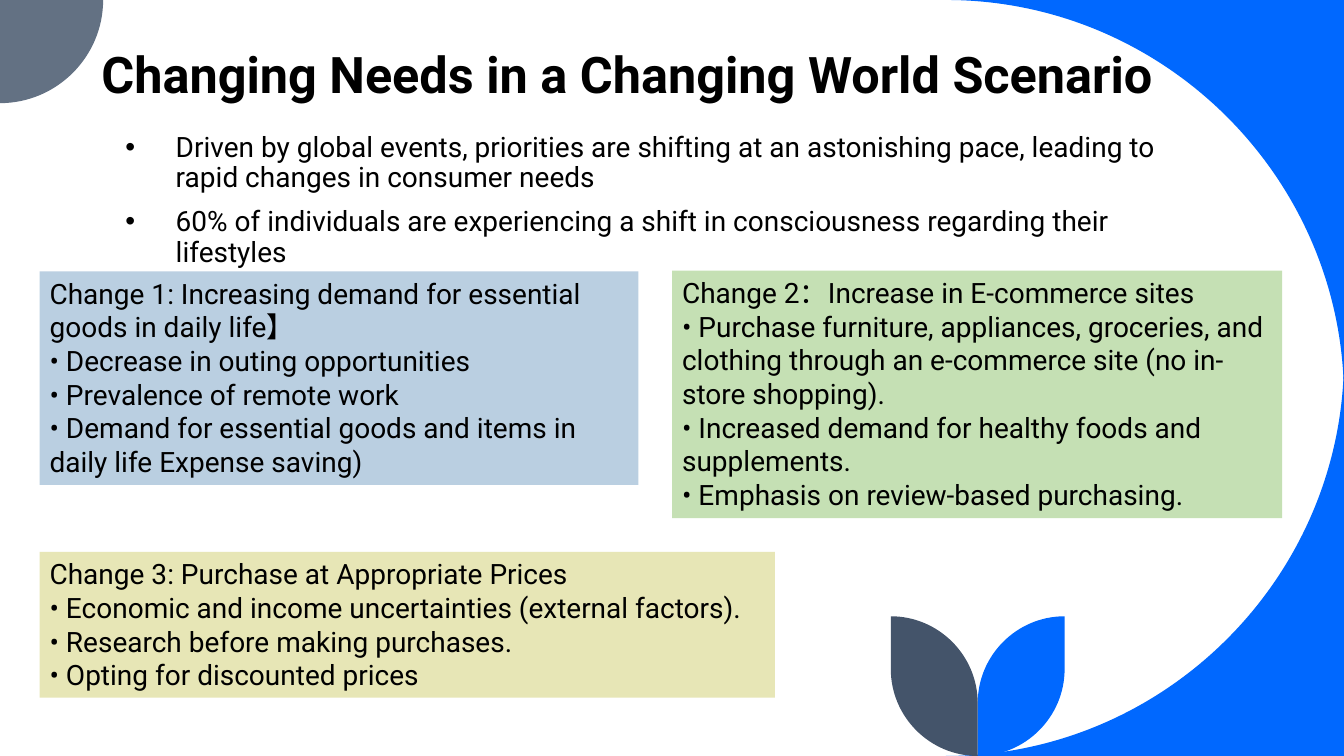
from lxml import etree
from pptx import Presentation
from pptx.dml.color import RGBColor
from pptx.enum.shapes import MSO_SHAPE
from pptx.enum.text import MSO_ANCHOR, MSO_AUTO_SIZE, PP_ALIGN
from pptx.oxml.ns import qn
from pptx.util import Cm, Pt

RECTANGLE = MSO_SHAPE.RECTANGLE
LEFT = PP_ALIGN.LEFT
TOP, BOTTOM = MSO_ANCHOR.TOP, MSO_ANCHOR.BOTTOM
NO_FIT, GROW = MSO_AUTO_SIZE.NONE, MSO_AUTO_SIZE.SHAPE_TO_FIT_TEXT

BLACK = RGBColor(0x00, 0x00, 0x00)
BLUE = RGBColor(0x00, 0x68, 0xFF)
GREY = RGBColor(0x63, 0x71, 0x83)
SLATE = RGBColor(0x44, 0x54, 0x6A)
PALE_BLUE = RGBColor(0xBA, 0xCF, 0xE1)
PALE_YELLOW = RGBColor(0xE7, 0xE6, 0xB6)
PALE_GREEN = RGBColor(0xC5, 0xE0, 0xB4)

FONT = "Roboto"
WIDTH, HEIGHT = 33.87, 19.05
ARC_PULL = 0.55  # share of the way to the corner that makes a quarter circle


def round_corner(before, corner, after):
    """Turn two straight segments that meet in a corner into one quarter arc."""
    curve = etree.Element(qn("a:cubicBezTo"))
    for end in (before, after):
        control = etree.SubElement(curve, qn("a:pt"))
        for axis in "xy":
            start, target = int(end.get(axis)), int(corner.get(axis))
            control.set(axis, str(round(start + ARC_PULL * (target - start))))
    corner_segment, end_segment = corner.getparent(), after.getparent()
    curve.append(after)
    corner_segment.getparent().replace(corner_segment, curve)
    end_segment.getparent().remove(end_segment)


def style_text(paragraph, size, bold=False):
    paragraph.alignment = LEFT
    paragraph.font.name = FONT
    paragraph.font.size = Pt(size)
    paragraph.font.bold = bold
    paragraph.font.color.rgb = BLACK


prs = Presentation()
prs.slide_width, prs.slide_height = Cm(WIDTH), Cm(HEIGHT)
slide = prs.slides.add_slide(prs.slide_layouts[5])

# Curved corners and the two leaves: the second of every three points is rounded
CURVE, DISC = 10.03, 2.6
STEM_X, LEAF_TOP, LEAF_WIDTH = 24.64, 15.53, 2.19
curve_x = WIDTH - CURVE
outlines = [
    (BLUE, [(curve_x, 0), (WIDTH, 0), (WIDTH, CURVE), (WIDTH, 0)]),
    (BLUE, [(WIDTH, HEIGHT - CURVE), (WIDTH, HEIGHT), (curve_x, HEIGHT), (WIDTH, HEIGHT)]),
    (GREY, [(DISC, 0), (DISC, DISC), (0, DISC), (0, 0)]),
]
for color, tip_x in ((BLUE, STEM_X + LEAF_WIDTH), (SLATE, STEM_X - LEAF_WIDTH)):
    outlines.append((color, [
        (tip_x, HEIGHT - LEAF_WIDTH), (tip_x, HEIGHT), (STEM_X, HEIGHT),
        (STEM_X, LEAF_TOP + LEAF_WIDTH), (STEM_X, LEAF_TOP), (tip_x, LEAF_TOP),
    ]))

for color, points in outlines:
    corners = [(Cm(x), Cm(y)) for x, y in points]
    builder = slide.shapes.build_freeform(*corners[0])
    builder.add_line_segments(corners[1:], close=True)
    decoration = builder.convert_to_shape()
    nodes = list(decoration._element.iter(qn("a:pt")))
    for before, corner, after in zip(nodes[::3], nodes[1::3], nodes[2::3]):
        round_corner(before, corner, after)
    decoration.shadow.inherit = False
    decoration.fill.solid()
    decoration.fill.fore_color.rgb = color
    decoration.line.fill.background()

# Title
title = slide.shapes.title
title.left, title.top, title.width, title.height = Cm(2.3), Cm(0.38), Cm(28.78), Cm(2.39)
title.text = "Changing Needs in a Changing World Scenario"
title.text_frame.auto_size = NO_FIT
title.text_frame.vertical_anchor = BOTTOM
heading = title.text_frame.paragraphs[0]
heading.line_spacing = 0.9
style_text(heading, 36, bold=True)

# Introductory bullets
intro = slide.shapes.add_textbox(Cm(2.91), Cm(3.23), Cm(27.15), Cm(3.6)).text_frame
intro.word_wrap = True
intro.text = "\n".join([
    "Driven by global events, priorities are shifting at an astonishing pace, "
    "leading to rapid changes in consumer needs",
    "60% of individuals are experiencing a shift in consciousness regarding their lifestyles",
])
for number, paragraph in enumerate(intro.paragraphs):
    properties = paragraph._p.get_or_add_pPr()
    properties.set("marL", str(Cm(1.27)))
    properties.set("indent", str(-Cm(1.27)))
    etree.SubElement(properties, qn("a:buFont")).set("typeface", "Arial")
    etree.SubElement(properties, qn("a:buChar")).set("char", "•")
    paragraph.line_spacing = 0.9
    if number:
        paragraph.space_before = Pt(10)
    style_text(paragraph, 20)

# The three changes
changes = [
    (1, 6.84, 15.09, 5.38, PALE_BLUE, [
        "Change 1: Increasing demand for essential goods in daily life】",
        "• Decrease in outing opportunities",
        "• Prevalence of remote work",
        "• Demand for essential goods and items in daily life Expense saving)",
    ]),
    (1, 13.91, 18.53, 3.67, PALE_YELLOW, [
        "Change 3: Purchase at Appropriate Prices",
        "• Economic and income uncertainties (external factors).",
        "• Research before making purchases.",
        "• Opting for discounted prices",
    ]),
    (16.94, 6.82, 15.37, 6.24, PALE_GREEN, [
        "Change 2：Increase in E-commerce sites",
        "• Purchase furniture, appliances, groceries, and clothing through "
        "an e-commerce site (no in-store shopping).",
        "• Increased demand for healthy foods and supplements.",
        "• Emphasis on review-based purchasing.",
    ]),
]
for left, top, width, height, color, lines in changes:
    panel = slide.shapes.add_shape(RECTANGLE, Cm(left), Cm(top), Cm(width), Cm(height))
    panel.shadow.inherit = False
    panel.fill.solid()
    panel.fill.fore_color.rgb = color
    panel.line.fill.background()
    panel.text_frame.text = "\n".join(lines)
    panel.text_frame.word_wrap = True
    panel.text_frame.auto_size = GROW
    panel.text_frame.vertical_anchor = TOP
    for paragraph in panel.text_frame.paragraphs:
        style_text(paragraph, 20)

prs.save("out.pptx")
